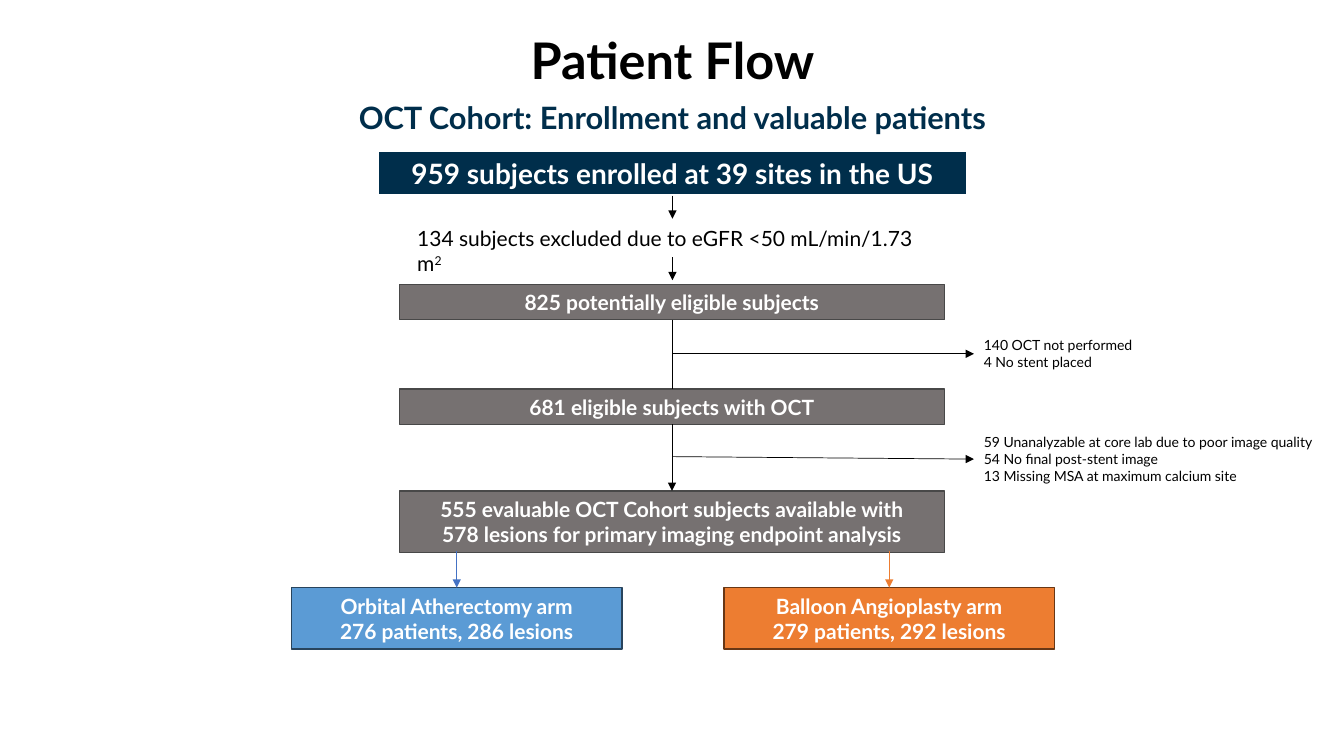
from lxml import etree
from pptx import Presentation
from pptx.dml.color import RGBColor
from pptx.enum import shapes, text
from pptx.oxml.ns import qn
from pptx.util import Inches, Pt

FONT = "Lato"
BLACK = RGBColor(0x00, 0x00, 0x00)
WHITE = RGBColor(0xFF, 0xFF, 0xFF)
NAVY = RGBColor(0x00, 0x2E, 0x4B)
GRAY = RGBColor(0x76, 0x71, 0x71)
DARK_GRAY = RGBColor(0x48, 0x48, 0x48)
BLUE = RGBColor(0x5B, 0x9B, 0xD5)
DARK_BLUE = RGBColor(0x28, 0x44, 0x5D)
ARROW_BLUE = RGBColor(0x44, 0x72, 0xC4)
ORANGE = RGBColor(0xED, 0x7D, 0x31)
DARK_ORANGE = RGBColor(0x68, 0x37, 0x15)
CENTER, LEFT = text.PP_ALIGN.CENTER, text.PP_ALIGN.LEFT
MIDDLE_X = 6.67


def write(shape, lines, size, color, bold=False, align=CENTER):
    """Fill a shape with one paragraph per line; a newline is a line break."""
    frame = shape.text_frame
    frame.word_wrap = True
    for index, line in enumerate(lines):
        para = frame.paragraphs[0] if index == 0 else frame.add_paragraph()
        para.alignment = align
        for part_index, part in enumerate(line.split("\n")):
            if part_index:
                para.add_line_break()
            span = para.add_run()
            span.text = part
            span.font.name = FONT
            span.font.size = Pt(size)
            span.font.bold = bold
            span.font.color.rgb = color


def connect(start, end, color=BLACK, source=None, target=None, side=0, arrow=True):
    """Draw a thin line, joined to the source's bottom and the target's side."""
    line = page.shapes.add_connector(
        shapes.MSO_CONNECTOR.STRAIGHT, *(Inches(value) for value in start + end))
    if source is not None:
        line.begin_connect(source, 2)
    if target is not None:
        line.end_connect(target, side)
    line.line.color.rgb = color
    line.line.width = Pt(0.5)
    if arrow:
        etree.SubElement(line.line._get_or_add_ln(), qn("a:tailEnd"), type="triangle")
    etree.SubElement(line._element.spPr, qn("a:effectLst"))


deck = Presentation()
deck.slide_width, deck.slide_height = Inches(13.33), Inches(7.5)
page = deck.slides.add_slide(deck.slide_layouts[5])

# Title and subtitle
title = page.shapes.title
title.left, title.top = Inches(0.92), Inches(-0.1)
title.width, title.height = Inches(11.5), Inches(1.45)
title.text_frame.vertical_anchor = text.MSO_ANCHOR.MIDDLE
write(title, ["Patient Flow"], 36, BLACK, bold=True)
title.text_frame.paragraphs[0].line_spacing = 0.9

subtitle = page.shapes.add_textbox(Inches(3.35), Inches(0.93), Inches(6.64), Inches(0.47))
write(subtitle, ["OCT Cohort: Enrollment and valuable patients"], 22, NAVY, bold=True)

# Flow boxes: place, fill, outline, outline width, text size, lines
flow = [
    (3.75, 1.5, 5.84, 0.44, NAVY, WHITE, 1.5, 20,
     ["959 subjects enrolled at 39 sites in the US"]),
    (3.96, 2.82, 5.41, 0.35, GRAY, DARK_GRAY, 1, 15,
     ["825 potentially eligible subjects"]),
    (3.96, 3.86, 5.41, 0.35, GRAY, DARK_GRAY, 1, 15,
     ["681 eligible subjects with OCT"]),
    (3.96, 4.87, 5.41, 0.61, GRAY, DARK_GRAY, 1, 15,
     ["555 evaluable OCT Cohort subjects available with\n"
      "578 lesions for primary imaging endpoint analysis"]),
    (2.89, 5.83, 3.28, 0.61, BLUE, DARK_BLUE, 1, 15,
     ["Orbital Atherectomy arm", "276 patients, 286 lesions"]),
    (7.18, 5.83, 3.28, 0.61, ORANGE, DARK_ORANGE, 1, 15,
     ["Balloon Angioplasty arm", "279 patients, 292 lesions"]),
]
boxes = []
for left, top, width, height, fill, outline, weight, size, lines in flow:
    box = page.shapes.add_shape(shapes.MSO_SHAPE.RECTANGLE, Inches(left), Inches(top),
                                Inches(width), Inches(height))
    box.shadow.inherit = False
    box.fill.solid()
    box.fill.fore_color.rgb = fill
    box.line.color.rgb = outline
    box.line.width = Pt(weight)
    write(box, lines, size, WHITE, bold=True)
    boxes.append(box)
enrolled, potential, eligible, evaluable, orbital, balloon = boxes

# Exclusion between the first two boxes
exclusion = page.shapes.add_textbox(Inches(4.04), Inches(2.19), Inches(5.26), Inches(0.35))
write(exclusion, ["134 subjects excluded due to eGFR <50 mL/min/1.73 m"], 15, BLACK, align=LEFT)
square = exclusion.text_frame.paragraphs[0].add_run()
square.text = "2"
square.font.name = FONT
square.font.size = Pt(15)
square.font.color.rgb = BLACK
square.font._element.set("baseline", "30000")

# Side notes, each with its arrow
notes = [
    (3.29, 1.94, 0.44, 3.51, ["140 OCT not performed", "4 No stent placed"]),
    (4.25, 3.49, 0.61, 4.53, ["59 Unanalyzable at core lab due to poor image quality",
                              "54 No final post-stent image",
                              "13 Missing MSA at maximum calcium site"]),
]
for top, width, height, branch_y, lines in notes:
    note = page.shapes.add_textbox(Inches(9.66), Inches(top), Inches(width), Inches(height))
    write(note, lines, 10, BLACK, align=LEFT)
    connect((MIDDLE_X, branch_y), (9.66, branch_y), target=note, side=1)

# Main path
connect((MIDDLE_X, 1.94), (MIDDLE_X, 2.17), source=enrolled)
connect((MIDDLE_X, 2.55), (MIDDLE_X, 2.78))
connect((MIDDLE_X, 3.17), (MIDDLE_X, 3.86), source=potential, target=eligible, arrow=False)
connect((MIDDLE_X, 4.21), (MIDDLE_X, 4.87), source=eligible, target=evaluable)

# Split into the two arms
for arm, x, color in [(orbital, 4.53, ARROW_BLUE), (balloon, 8.82, ORANGE)]:
    connect((x, 5.47), (x, 5.83), color, target=arm)

deck.save("out.pptx")
